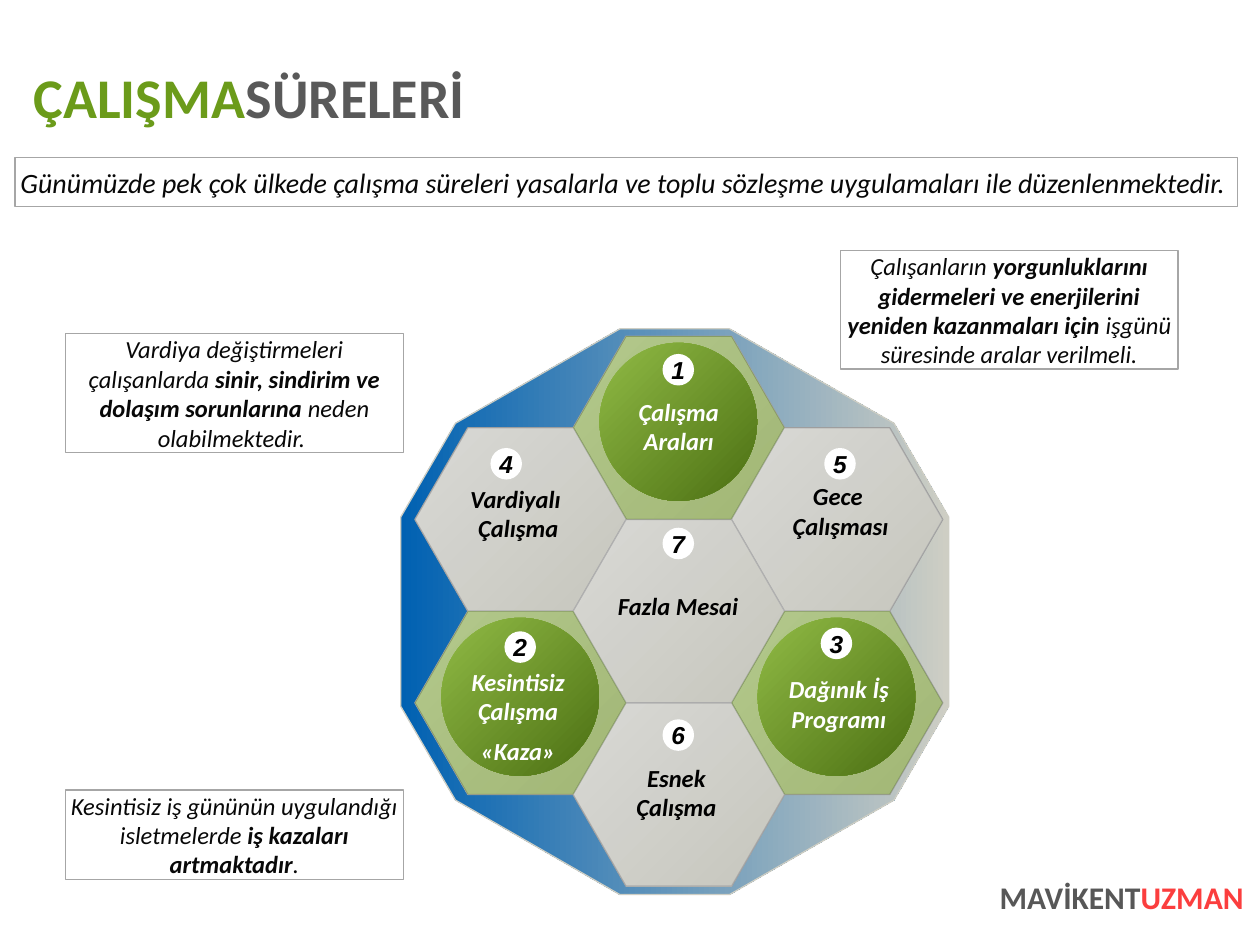
from collections import namedtuple

from lxml.etree import SubElement
from pptx import Presentation
from pptx.dml.color import RGBColor
from pptx.enum.shapes import MSO_SHAPE as Shape
from pptx.enum.text import MSO_ANCHOR as Anchor, PP_ALIGN as Align
from pptx.oxml.ns import qn
from pptx.util import Inches, Pt

Box = namedtuple("Box", "left top width height")
Cell = namedtuple("Cell", "number column row green badge label lines")

SLIDE = Box(0, 0, Inches(10), Inches(7.5))
GREEN, GREY, BLACK, WHITE, INK = "6B9B1A", "C0C0C0", "000000", "FFFFFF", "080808"

# Honeycomb: columns and half rows; badge and label in percent of the cell
CELLS = [
    Cell(1, 1, 0, True, (42.3, 9.7), (24.4, 33.1, 51.2, 32.4), ["Çalışma Araları"]),
    Cell(2, 0, 3, True, (42.3, 11), (23.2, 30.3, 51.2, 55), ["Kesintisiz Çalışma", "«Kaza»"]),
    Cell(3, 2, 3, True, (42.3, 9), (11.9, 34.5, 78, 32.4), ["Dağınık İş Programı"]),
    Cell(4, 0, 1, False, (35.7, 11), (18.5, 38.6, 60.7, 15.9), ["Vardiyalı ", "Çalışma"]),
    Cell(5, 2, 1, False, (44, 11), (21.4, 37.2, 60.7, 15.9), ["Gece ", "Çalışması"]),
    Cell(6, 1, 4, False, (42.3, 9), (18.5, 40.7, 60.7, 15.9), ["Esnek Çalışma"]),
    Cell(7, 1, 2, False, (42.3, 4.5), (19.6, 39, 60.1, 15.9), ["Fazla Mesai"]),
]


def part(box, left, top, width, height):
    """Box whose place and size are percentages of another box."""
    return Box(int(box.left + box.width * left / 100), int(box.top + box.height * top / 100),
               int(box.width * width / 100), int(box.height * height / 100))


def color(value):
    return RGBColor.from_string(value)


def paint(shape, fill=None, line=None, gradient=None, angle=0, alpha=None):
    shape.shadow.inherit = False
    if gradient:
        shape.fill.gradient()
        shape.fill.gradient_angle = 360 - angle
        for stop, value in zip(shape.fill.gradient_stops, gradient):
            stop.color.rgb = color(value)
    elif fill:
        shape.fill.solid()
        shape.fill.fore_color.rgb = color(fill)
        if alpha:
            tint = shape.fill._xPr.find(".//" + qn("a:srgbClr"))
            SubElement(tint, qn("a:alpha")).set("val", str(alpha * 1000))
    else:
        shape.fill.background()
    if line:
        shape.line.color.rgb = color(line)
        shape.line.width = Pt(0.75)
    else:
        shape.line.fill.background()


def write(shape, paragraphs, size, align=Align.CENTER, anchor=Anchor.TOP, wrap=True,
          inset=0, font="Calibri", italic=True, after=0):
    """Each paragraph is a list of runs: (text, colour, bold)."""
    frame = shape.text_frame
    frame.word_wrap = wrap
    frame.vertical_anchor = anchor
    frame.margin_left = frame.margin_right = Inches(inset)
    frame.margin_top = frame.margin_bottom = Inches(inset / 2)
    for index, runs in enumerate(paragraphs):
        paragraph = frame.add_paragraph() if index else frame.paragraphs[0]
        paragraph.alignment = align
        paragraph.space_after = Pt(after)
        for text, value, bold in runs:
            run = paragraph.add_run()
            run.text = text
            run.font.name, run.font.size = font, Pt(size)
            run.font.bold, run.font.italic = bold, italic
            run.font.color.rgb = color(value)


def add_heading(slide, box, runs, size, align, inset):
    write(slide.shapes.add_textbox(*box), [runs], size, align, inset=inset, italic=False)


def add_callout(slide, box, pieces, size=14):
    """Framed note; every second piece is bold."""
    shape = slide.shapes.add_shape(Shape.RECTANGLE, *box)
    paint(shape, line="A6A6A6")
    runs = [(text, INK, index % 2 == 1) for index, text in enumerate(pieces)]
    write(shape, [runs], size, anchor=Anchor.MIDDLE)


def add_backdrop(slide, box):
    outline = [(40, 0), (60, 0), (90, 16.7), (100, 33.3), (100, 66.7), (90, 83.3),
               (60, 100), (40, 100), (10, 83.3), (0, 66.7), (0, 33.3), (10, 16.7)]
    corners = [part(box, x, y, 0, 0)[:2] for x, y in outline]
    builder = slide.shapes.build_freeform(*corners[0])
    builder.add_line_segments(corners[1:], close=True)
    paint(builder.convert_to_shape(), gradient=("0061B2", "CECEC4"), line="CECEC4")


def add_hexagon(slide, box, **style):
    shape = slide.shapes.add_shape(Shape.HEXAGON, *box)
    shape.adjustments[0] = 0.289
    paint(shape, **style)


def add_cell_content(slide, box, cell):
    # Green disc
    if cell.green:
        disc = slide.shapes.add_shape(Shape.OVAL, *part(box, 12.5, 3.6, 74.5, 86.2))
        paint(disc, gradient=("90BA45", "4C7013"), angle=45)

    # Number badge
    badge = slide.shapes.add_shape(Shape.OVAL, *part(box, *cell.badge, 14.9, 17.2))
    paint(badge, fill=WHITE)
    write(badge, [[(str(cell.number), BLACK, True)]], 14, anchor=Anchor.MIDDLE,
          wrap=False, inset=0.1, font="Arial")

    # Label
    label = slide.shapes.add_textbox(*part(box, *cell.label))
    value = WHITE if cell.green else BLACK
    write(label, [[(line, value, True)] for line in cell.lines], 14, wrap=cell.green,
          anchor=Anchor.TOP if cell.green else Anchor.MIDDLE, after=6 if cell.green else 0)


def add_honeycomb(slide, box):
    add_backdrop(slide, box)
    places = [(part(box, 2.6 + 28.85 * cell.column, 1.3 + 16.2 * cell.row, 38.6, 32.4), cell)
              for cell in CELLS]
    for place, cell in places:
        add_hexagon(slide, place, gradient=("EDEDE7", "CCCCBC"), angle=45, line="9D9D9D")
    for place, cell in places:
        add_hexagon(slide, place, fill=GREEN if cell.green else GREY, alpha=44)
    for place, cell in places:
        add_cell_content(slide, place, cell)


def main():
    presentation = Presentation()
    presentation.slide_width, presentation.slide_height = SLIDE.width, SLIDE.height
    slide = presentation.slides.add_slide(presentation.slide_layouts[6])

    # Footer and title
    add_heading(slide, part(SLIDE, 75.6, 92.93, 23.1, 7.07),
                [("MAVİKENT", "575757", True), ("UZMAN", "FB3E3E", True)], 18, Align.RIGHT, 0)
    add_heading(slide, part(SLIDE, 1.7, 6, 98.3, 8.53),
                [("ÇALIŞMA", GREEN, True), ("SÜRELERİ", "595959", True)], 32, Align.LEFT, 0.1)

    add_honeycomb(slide, part(SLIDE, 31.8, 34.8, 43.5, 59.87))

    # Framed notes
    add_callout(slide, part(SLIDE, 1.2, 16.67, 97, 5.2),
                ["Günümüzde pek çok ülkede çalışma süreleri yasalarla ve toplu sözleşme "
                 "uygulamaları ile düzenlenmektedir. "], size=16)
    add_callout(slide, part(SLIDE, 66.7, 26.53, 26.8, 12.53),
                ["Çalışanların ",
                 "yorgunluklarını gidermeleri ve enerjilerini yeniden kazanmaları için ",
                 "işgünü süresinde aralar verilmeli."])
    add_callout(slide, part(SLIDE, 5.2, 35.33, 26.8, 12.53),
                ["Vardiya değiştirmeleri çalışanlarda ",
                 "sinir, sindirim ve dolaşım sorunlarına ", "neden olabilmektedir. "])
    add_callout(slide, part(SLIDE, 5.2, 83.6, 26.8, 9.47),
                ["Kesintisiz iş gününün uygulandığı isletmelerde ",
                 "iş kazaları artmaktadır", "."])

    presentation.save("out.pptx")


if __name__ == "__main__":
    main()
